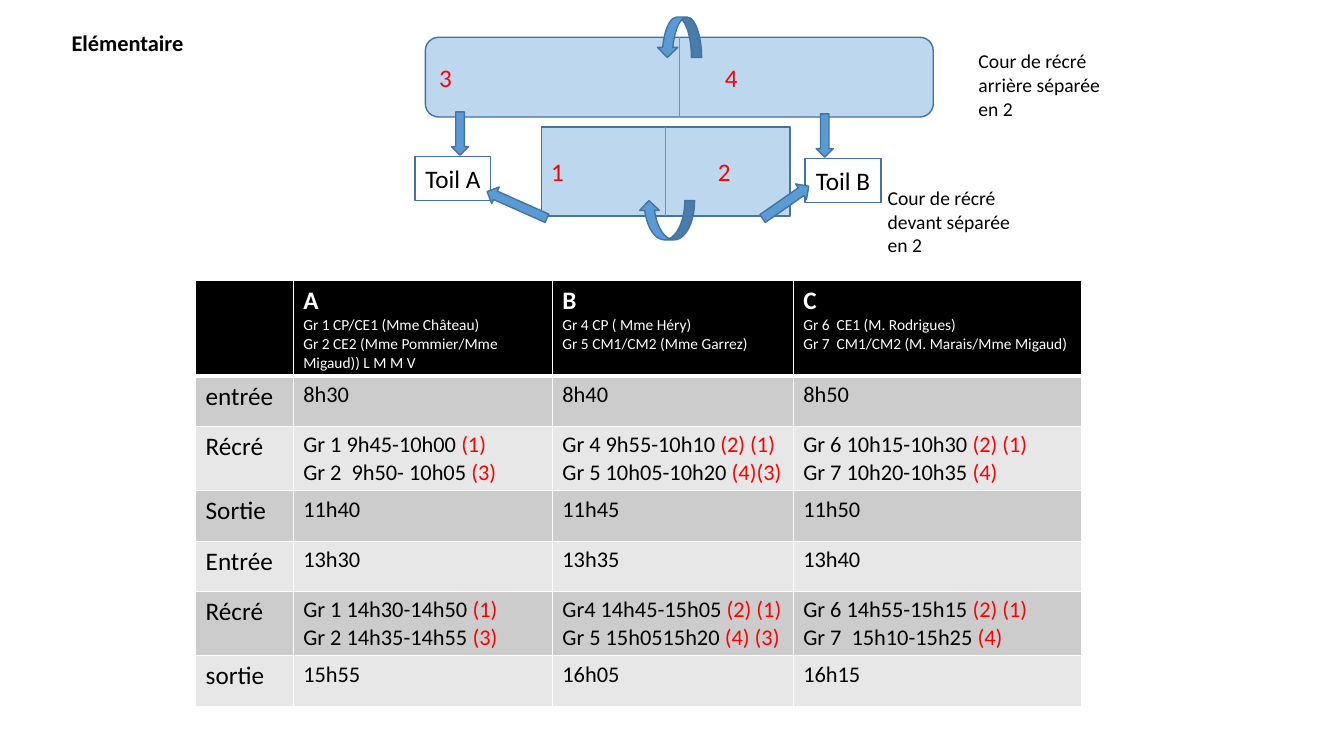
import dataclasses
from typing import Any, Optional

import lxml.etree
import pptx
import pptx.dml.color
import pptx.enum.shapes
import pptx.enum.text
import pptx.oxml
import pptx.oxml.ns
import pptx.util

Cm, Pt = pptx.util.Cm, pptx.util.Pt
MSO = pptx.enum.shapes.MSO_SHAPE
ALIGN = pptx.enum.text.PP_ALIGN
ANCHOR = pptx.enum.text.MSO_ANCHOR
qn = pptx.oxml.ns.qn


@dataclasses.dataclass(frozen=True)
class Theme:
    font: str = "Calibri"
    black: str = "000000"
    white: str = "FFFFFF"
    red: str = "FF0000"
    yard: str = "BDD7EE"
    arrow: str = "5B9BD5"
    outline: str = "43739E"
    bands: tuple[str, str] = ("CCCCCC", "E7E7E7")
    large: int = 18
    body: int = 16
    note: int = 14
    small: int = 11


THEME = Theme()


@dataclasses.dataclass(frozen=True)
class Box:
    """A shape; lengths in cm, with an optional tab stop for its text."""
    kind: Any
    left: float
    top: float
    width: float
    height: float
    fill: str = THEME.arrow
    rotation: float = 0
    text: str = ""
    color: str = THEME.black
    align: Any = ALIGN.LEFT
    tab: Optional[float] = None


@dataclasses.dataclass(frozen=True)
class Note:
    text: str
    left: float
    top: float


@dataclasses.dataclass(frozen=True)
class Row:
    """A table row; a bar in a cell starts the red yard numbers."""
    label: str
    cells: tuple[str, str, str]
    height: float = 1.27


YARDS = [
    Box(MSO.RECTANGLE, 13.64, 3.2, 6.27, 2.24, THEME.yard, text="1\t2", color=THEME.red, tab=4.2),
    Box(MSO.ROUNDED_RECTANGLE, 10.72, 0.94, 12.8, 2.01, THEME.yard, text="3\t4", color=THEME.red, tab=7.2),
]
NOTES = [
    Note("Cour de récré devant séparée en 2", 22.12, 4.57),
    Note("Cour de récré arrière séparée en 2", 24.41, 1.12),
]
SWAPS = [
    Box(MSO.CURVED_LEFT_ARROW, 16.31, 4.85, 0.99, 1.4, rotation=90),
    Box(MSO.CURVED_RIGHT_ARROW, 16.61, 0.38, 1.02, 1.12, rotation=90),
]
TOILETS = [
    Box(MSO.RECTANGLE, 10.46, 3.94, 1.91, 1.12, THEME.white, text="Toil A", align=ALIGN.CENTER),
    Box(MSO.RECTANGLE, 20.29, 3.99, 1.91, 1.12, THEME.white, text="Toil B", align=ALIGN.CENTER),
]
ROUTES = [
    Box(MSO.DOWN_ARROW, 11.38, 2.82, 0.43, 1.09),
    Box(MSO.DOWN_ARROW, 20.57, 2.87, 0.43, 1.09),
    Box(MSO.DOWN_ARROW, 19.56, 4.39, 0.48, 1.42, rotation=235.1),
    Box(MSO.DOWN_ARROW, 12.8, 4.34, 0.46, 1.65, rotation=114),
]
COLUMN_WIDTHS = (2.46, 6.53, 6.07, 7.26)
ROWS = [
    Row("", (
        "A\nGr 1 CP/CE1 (Mme Château)\nGr 2 CE2 (Mme Pommier/Mme Migaud)) L M M V",
        "B\nGr 4 CP ( Mme Héry)\nGr 5 CM1/CM2 (Mme Garrez)",
        "C\nGr 6  CE1 (M. Rodrigues)\nGr 7  CM1/CM2 (M. Marais/Mme Migaud)"), 2.39),
    Row("entrée", ("8h30", "8h40", "8h50")),
    Row("Récré", (
        "Gr 1 9h45-10h00 |(1)\nGr 2  9h50- 10h05 |(3)",
        "Gr 4 9h55-10h10 |(2) (1)\nGr 5 10h05-10h20 |(4)(3)",
        "Gr 6 10h15-10h30 |(2) (1)\nGr 7 10h20-10h35 |(4)"), 1.62),
    Row("Sortie", ("11h40", "11h45", "11h50")),
    Row("Entrée", ("13h30", "13h35", "13h40")),
    Row("Récré", (
        "Gr 1 14h30-14h50 |(1)\nGr 2 14h35-14h55 |(3)",
        "Gr4 14h45-15h05 |(2) (1)\nGr 5 15h0515h20 |(4) (3)",
        "Gr 6 14h55-15h15 |(2) (1)\nGr 7  15h10-15h25 |(4)"), 1.62),
    Row("sortie", ("15h55", "16h05", "16h15")),
]


def rgb(color: str) -> Any:
    return pptx.dml.color.RGBColor.from_string(color)


def write_text(tf: Any, text: str, *, size: int, color: str = THEME.black, bold: bool = False,
               align: Any = ALIGN.LEFT, anchor: Any = ANCHOR.TOP, heading: bool = False) -> None:
    """Write lines; text after a bar is red, and a heading's later lines are small."""
    tf.word_wrap = True
    tf.vertical_anchor = anchor
    for i, line in enumerate(text.split("\n")):
        p = tf.paragraphs[0] if i == 0 else tf.add_paragraph()
        p.alignment = align
        detail = heading and i > 0
        for j, part in enumerate(line.split("|")):
            r = p.add_run()
            r.text = part
            r.font.name = THEME.font
            r.font.size = Pt(THEME.small if detail else size)
            r.font.bold = bold and not detail
            r.font.color.rgb = rgb(THEME.red if j else color)


def add_box(s: Any, box: Box) -> Any:
    sp = s.shapes.add_shape(box.kind, Cm(box.left), Cm(box.top), Cm(box.width), Cm(box.height))
    sp.shadow.inherit = False
    sp.rotation = box.rotation
    sp.fill.solid()
    sp.fill.fore_color.rgb = rgb(box.fill)
    sp.line.color.rgb = rgb(THEME.outline)
    sp.line.width = Pt(1)
    if box.text:
        write_text(sp.text_frame, box.text, size=THEME.large, color=box.color,
                   align=box.align, anchor=ANCHOR.MIDDLE)
    if box.tab:
        pPr = sp.text_frame.paragraphs[0]._p.get_or_add_pPr()
        tabs = lxml.etree.SubElement(pPr, qn("a:tabLst"))
        lxml.etree.SubElement(tabs, qn("a:tab"), pos=str(Cm(box.tab)), algn="l")
    return sp


def add_divider(s: Any, yard: Any) -> None:
    line = s.shapes.add_connector(pptx.enum.shapes.MSO_CONNECTOR.STRAIGHT, 0, 0, 0, 0)
    line.begin_connect(yard, 0)
    line.end_connect(yard, 2)
    line.line.color.rgb = rgb(THEME.arrow)
    line.line.width = Pt(0.5)
    lxml.etree.SubElement(line._element.spPr, qn("a:effectLst"))


def format_cell(cell: Any, fill: str, bottom: float, top: float) -> None:
    cell.fill.solid()
    cell.fill.fore_color.rgb = rgb(fill)
    tcPr = cell._tc.get_or_add_tcPr()
    for i, (side, width) in enumerate((("L", 1), ("R", 1), ("T", top), ("B", bottom))):
        ln = lxml.etree.Element(qn(f"a:ln{side}"), w=str(Pt(width)))
        solid = lxml.etree.SubElement(ln, qn("a:solidFill"))
        lxml.etree.SubElement(solid, qn("a:srgbClr"), val=THEME.white)
        tcPr.insert(i, ln)


def add_timetable(s: Any) -> None:
    frame = s.shapes.add_table(len(ROWS), len(COLUMN_WIDTHS), Cm(4.93), Cm(7.06),
                               Cm(sum(COLUMN_WIDTHS)), Cm(sum(row.height for row in ROWS)))
    table = frame.table
    for column, width in zip(table.columns, COLUMN_WIDTHS):
        column.width = Cm(width)
    for i, row in enumerate(ROWS):
        table.rows[i].height = Cm(row.height)
        header = i == 0
        fill = THEME.black if header else THEME.bands[(i - 1) % 2]
        for j, text in enumerate((row.label, *row.cells)):
            cell = table.cell(i, j)
            format_cell(cell, fill, bottom=3 if header else 1, top=3 if i == 1 else 1)
            if text:
                write_text(cell.text_frame, text, size=THEME.large if header or j == 0 else THEME.body,
                           color=THEME.white if header else THEME.black, bold=header, heading=header)


def main() -> None:
    prs = pptx.Presentation()
    prs.slide_width, prs.slide_height = Cm(33.87), Cm(19.05)
    s = prs.slides.add_slide(prs.slide_layouts[5])

    # Title
    title = s.shapes.title
    title.left, title.top, title.width, title.height = Cm(1.55), Cm(0.61), Cm(7.95), Cm(0.94)
    title.text_frame.auto_size = pptx.enum.text.MSO_AUTO_SIZE.NONE
    write_text(title.text_frame, "Elémentaire", size=THEME.body, bold=True)

    # Playgrounds, each split in two
    yards = [add_box(s, yard) for yard in YARDS]
    for note in NOTES:
        sp = s.shapes.add_textbox(Cm(note.left), Cm(note.top), Cm(3.91), Cm(2.06))
        write_text(sp.text_frame, note.text, size=THEME.note)
    for yard in yards:
        add_divider(s, yard)
    for swap in SWAPS:
        add_box(s, swap)

    # Timetable
    add_timetable(s)

    # Toilets and the ways to them
    for box in TOILETS + ROUTES:
        add_box(s, box)

    prs.save("out.pptx")


if __name__ == "__main__":
    main()
